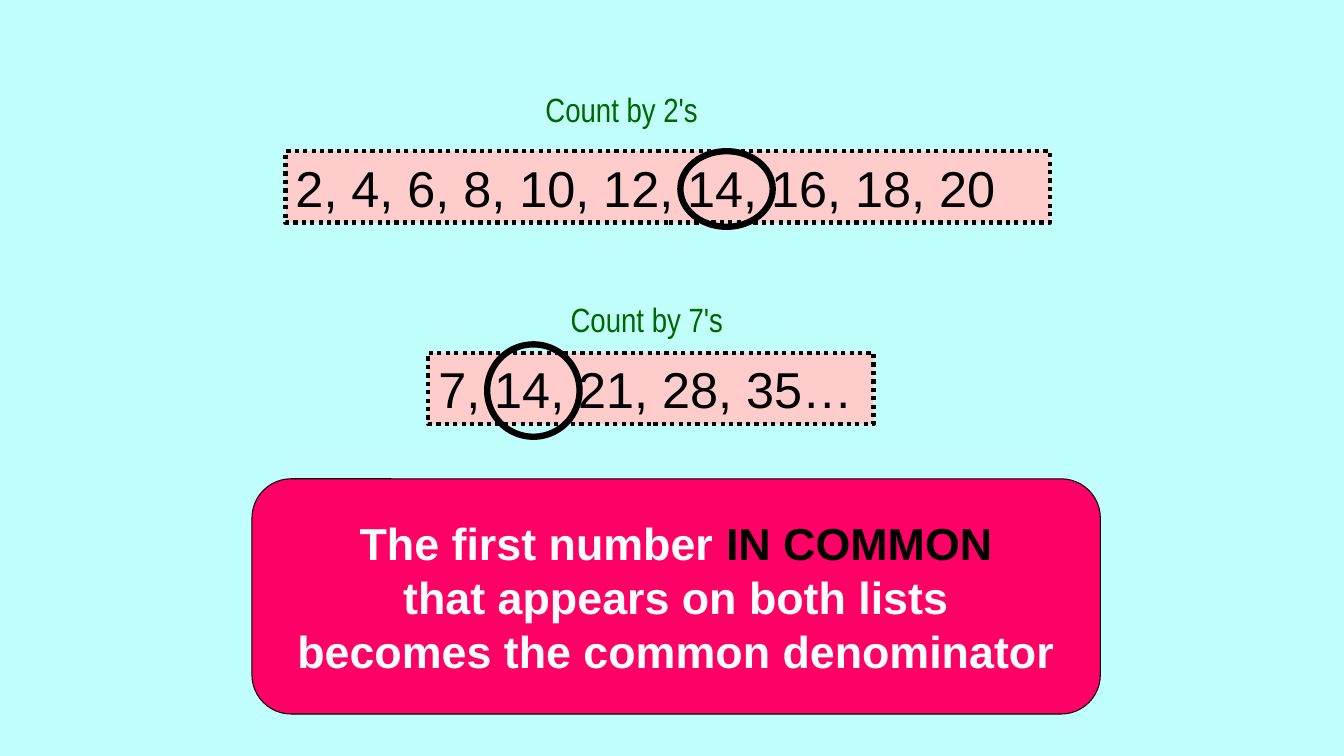
from dataclasses import dataclass

from pptx import Presentation
from pptx.dml.color import RGBColor
from pptx.enum.dml import MSO_LINE
from pptx.enum.shapes import MSO_SHAPE
from pptx.enum.text import MSO_ANCHOR, PP_ALIGN
from pptx.util import Pt

RECT, ROUND, OVAL = MSO_SHAPE.RECTANGLE, MSO_SHAPE.ROUNDED_RECTANGLE, MSO_SHAPE.OVAL
DOTTED = MSO_LINE.ROUND_DOT
LEFT, CENTER = PP_ALIGN.LEFT, PP_ALIGN.CENTER
TOP, MIDDLE = MSO_ANCHOR.TOP, MSO_ANCHOR.MIDDLE
BLANK_LAYOUT = 6


@dataclass(frozen=True)
class Theme:
    background: str = "C1FFFC"
    list_fill: str = "FFCCCC"
    callout_fill: str = "FF0066"
    black: str = "000000"
    white: str = "FFFFFF"
    green: str = "006600"
    font: str = "Arial"
    label_font: str = "Arial Narrow"
    list_size: int = 36
    label_size: int = 24
    callout_size: int = 32


class Deck:
    def __init__(self, theme):
        self.theme = theme
        self.prs = Presentation()
        self.prs.slide_width, self.prs.slide_height = Pt(960), Pt(540)
        self.slide = None

    def add_slide(self):
        self.slide = self.prs.slides.add_slide(self.prs.slide_layouts[BLANK_LAYOUT])
        fill = self.slide.background.fill
        fill.solid()
        fill.fore_color.rgb = RGBColor.from_string(self.theme.background)

    def shape(self, kind, box, fill=None, width=0.75, dash=None):
        sp = self.slide.shapes.add_shape(kind, *map(Pt, box))
        sp.shadow.inherit = False
        if fill:
            sp.fill.solid()
            sp.fill.fore_color.rgb = RGBColor.from_string(fill)
        else:
            sp.fill.background()
        sp.line.color.rgb = RGBColor.from_string(self.theme.black)
        sp.line.width = Pt(width)
        if dash:
            sp.line.dash_style = dash
        return sp

    def set_text(self, sp, lines, align, anchor, **font):
        """Fill a shape with lines, each a list of (text, colour) runs."""
        tf = sp.text_frame
        tf.word_wrap = False
        tf.vertical_anchor = anchor
        for i, runs in enumerate(lines):
            p = tf.add_paragraph() if i else tf.paragraphs[0]
            p.alignment = align
            for text, color in runs:
                r = p.add_run()
                r.text = text
                r.font.color.rgb = RGBColor.from_string(color)
                for name, value in font.items():
                    setattr(r.font, name, value)

    def number_list(self, text, box):
        t = self.theme
        sp = self.shape(RECT, box, t.list_fill, 3, DOTTED)
        self.set_text(sp, [[(text, t.black)]], LEFT, MIDDLE,
                      name=t.font, size=Pt(t.list_size))

    def label(self, text, box):
        t = self.theme
        sp = self.slide.shapes.add_textbox(*map(Pt, box))
        self.set_text(sp, [[(text, t.green)]], CENTER, TOP,
                      name=t.label_font, size=Pt(t.label_size))

    def callout(self, lines, box):
        t = self.theme
        sp = self.shape(ROUND, box, t.callout_fill)
        self.set_text(sp, lines, CENTER, MIDDLE,
                      name=t.font, size=Pt(t.callout_size), bold=True)

    def ring(self, box):
        self.shape(OVAL, box, width=4.5)


def main():
    theme = Theme()
    deck = Deck(theme)
    deck.add_slide()

    # Counting lists, each with its label and the shared number circled
    counts = [
        ("Count by 2's", (330, 60, 228, 30),
         "2, 4, 6, 8, 10, 12, 14, 16, 18, 20", (204, 108, 546, 51), (486, 108, 66, 54)),
        ("Count by 7's", (348, 210, 228, 30),
         "7, 14, 21, 28, 35…", (306, 252, 318, 51), (348, 246, 66, 66)),
    ]
    for label, label_box, numbers, list_box, ring_box in counts:
        deck.number_list(numbers, list_box)
        deck.label(label, label_box)
        deck.ring(ring_box)

    # Conclusion
    deck.callout([
        [("The first number ", theme.white), ("IN COMMON", theme.black)],
        [("that appears on both lists", theme.white)],
        [("becomes the common denominator", theme.white)],
    ], (180, 342, 606, 168))

    deck.prs.save("out.pptx")


if __name__ == "__main__":
    main()
